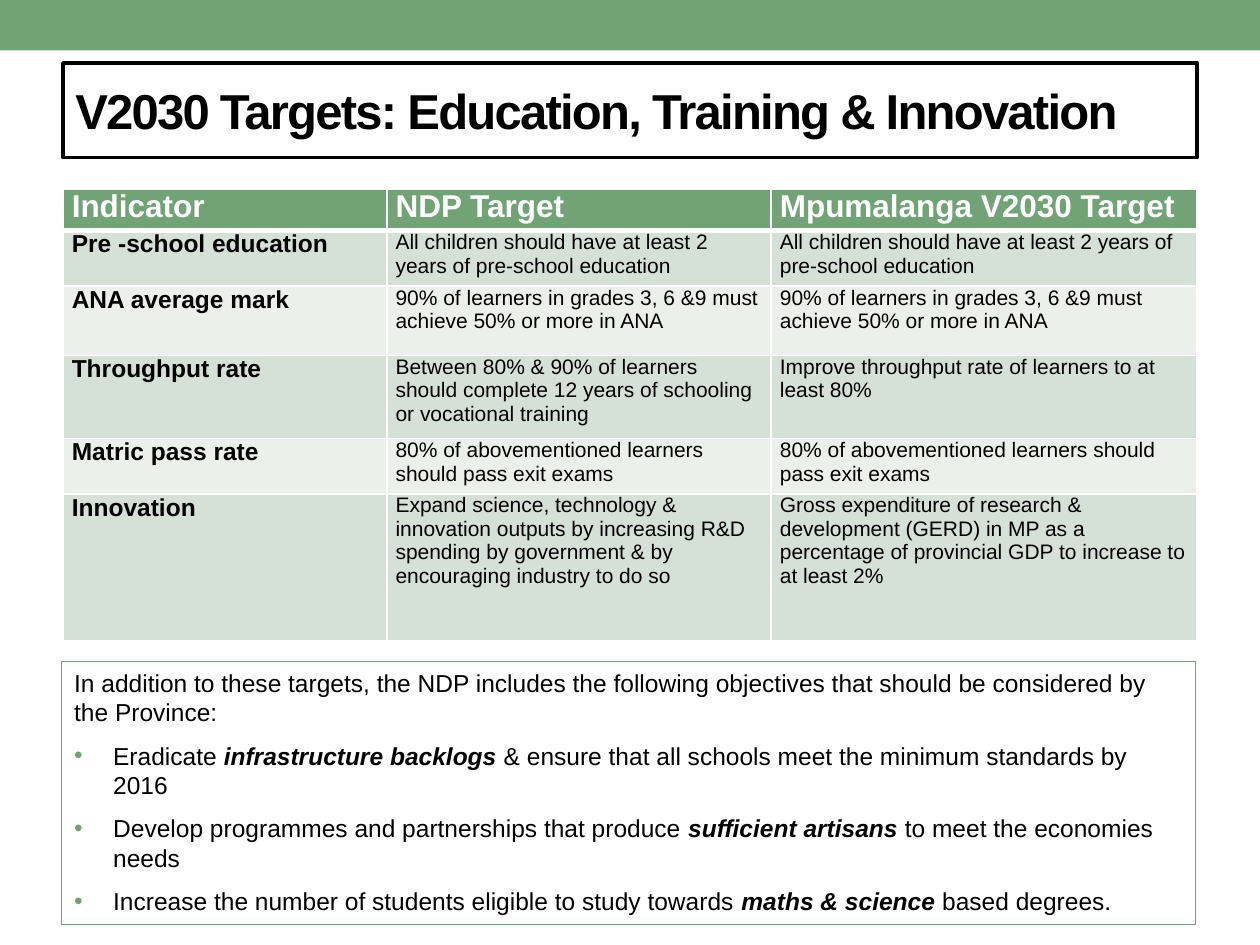
import pptx
import pptx.util
import pptx.dml.color
import pptx.enum.shapes
import pptx.enum.text
import pptx.oxml
import pptx.oxml.ns

COLOURS = {
    "green": "72A376",
    "band_dark": "D5E0D6",
    "band_light": "EBF0EC",
    "white": "FFFFFF",
    "black": "000000",
}
HEADINGS = ("Indicator", "NDP Target", "Mpumalanga V2030 Target")
TARGETS = (
    ("Pre -school education",
     "All children should have at least 2 years of pre-school education",
     "All children should have at least 2 years of pre-school education"),
    ("ANA average mark",
     "90% of learners in grades 3, 6 &9 must achieve 50% or more in ANA",
     "90% of learners in grades 3, 6 &9 must achieve 50% or more in ANA"),
    ("Throughput rate",
     "Between 80% & 90% of learners should complete 12 years of schooling or vocational training",
     "Improve throughput rate of learners to at least 80%"),
    ("Matric pass rate",
     "80% of abovementioned learners should pass exit exams",
     "80% of abovementioned learners should pass exit exams"),
    ("Innovation",
     "Expand science, technology & innovation outputs by increasing R&D spending by government"
     " & by encouraging industry to do so",
     "Gross expenditure of research & development (GERD) in MP as a percentage of provincial GDP"
     " to increase to at least 2%"),
)
COLUMN_WIDTHS = (2.57, 3.05, 3.38)
ROW_HEIGHTS = (0.33, 0.44, 0.55, 0.66, 0.44, 1.17)
INTRO = ("In addition to these targets, the NDP includes the following objectives"
         " that should be considered by the Province:")
# Each objective: lead-in, emphasised phrase, ending
OBJECTIVES = (
    ("Eradicate ", "infrastructure backlogs ",
     "& ensure that all schools meet the minimum standards by 2016"),
    ("Develop programmes and partnerships that produce ", "sufficient artisans ",
     "to meet the economies needs"),
    ("Increase the number of students eligible to study towards ", "maths & science ",
     "based degrees."),
)


def rgb(name):
    return pptx.dml.color.RGBColor.from_string(COLOURS[name])


def add_xml(parent, tag, attributes="", content=""):
    ns = pptx.oxml.ns.nsdecls("a")
    parent.append(pptx.oxml.parse_xml(f"<a:{tag} {ns} {attributes}>{content}</a:{tag}>"))


class TargetsSlide:
    """Slide style; positions are columns and rows of a 20 by 15 half-inch grid."""
    unit = 0.5
    font = "Arial"

    def __init__(self, deck):
        self.slide = deck.slides.add_slide(deck.slide_layouts[6])

    def grid(self, *places):
        return [pptx.util.Inches(place * self.unit) for place in places]

    def box(self, col, row, cols, rows, fill=None, line=None, weight=1):
        shape = self.slide.shapes.add_shape(
            pptx.enum.shapes.MSO_SHAPE.RECTANGLE, *self.grid(col, row, cols, rows))
        shape.shadow.inherit = False
        if fill:
            shape.fill.solid()
            shape.fill.fore_color.rgb = rgb(fill)
        else:
            shape.fill.background()
        if line:
            shape.line.color.rgb = rgb(line)
            shape.line.width = pptx.util.Pt(weight)
        else:
            shape.line.fill.background()
        return shape.text_frame

    def add_text(self, paragraph, text, size, colour="black", **format_values):
        run = paragraph.add_run()
        run.text = text
        values = {"name": self.font, "size": pptx.util.Pt(size), **format_values}
        for attribute, value in values.items():
            setattr(run.font, attribute, value)
        run.font.color.rgb = rgb(colour)
        return run

    def space(self, paragraph):
        values = {"alignment": pptx.enum.text.PP_ALIGN.LEFT,
                  "space_before": pptx.util.Pt(4), "space_after": pptx.util.Pt(4)}
        for attribute, value in values.items():
            setattr(paragraph, attribute, value)

    def title(self, frame, text):
        frame.word_wrap = True
        frame.vertical_anchor = pptx.enum.text.MSO_ANCHOR.MIDDLE
        heading = frame.paragraphs[0]
        heading.alignment = pptx.enum.text.PP_ALIGN.LEFT
        run = self.add_text(heading, text, 28, bold=True)
        run.font._element.set("spc", "-100")

    def cell(self, cell, text, size, fill, colour, bold, bottom):
        margins = {"margin_left": 0.07, "margin_right": 0.07, "margin_top": 0, "margin_bottom": 0}
        for attribute, inches in margins.items():
            setattr(cell, attribute, pptx.util.Inches(inches))
        white = f'<a:solidFill><a:srgbClr val="{COLOURS["white"]}"/></a:solidFill>'
        borders = {"lnL": 1, "lnR": 1, "lnT": 1, "lnB": bottom}
        for side, weight in borders.items():
            add_xml(cell._tc.get_or_add_tcPr(), side, f'w="{pptx.util.Pt(weight)}"', white)
        cell.fill.solid()
        cell.fill.fore_color.rgb = rgb(fill)
        paragraph = cell.text_frame.paragraphs[0]
        self.space(paragraph)
        self.add_text(paragraph, text, size, colour, bold=bold)

    def table(self, col, row, headings, records, widths, heights):
        place = self.grid(col, row, sum(widths) / self.unit, sum(heights) / self.unit)
        table = self.slide.shapes.add_table(len(heights), len(widths), *place).table
        for column, width in zip(table.columns, widths):
            column.width = pptx.util.Inches(width)
        for table_row, height in zip(table.rows, heights):
            table_row.height = pptx.util.Inches(height)
        for c, heading in enumerate(headings):
            self.cell(table.cell(0, c), heading, 18, "green", "white", True, 3)
        for r, record in enumerate(records, 1):
            band = "band_dark" if r % 2 else "band_light"
            for c, text in enumerate(record):
                self.cell(table.cell(r, c), text, 12 if c else 14, band, "black", c == 0, 1)

    def objectives(self, frame, intro, items):
        frame.word_wrap = True
        frame.vertical_anchor = pptx.enum.text.MSO_ANCHOR.TOP
        opening = frame.paragraphs[0]
        self.space(opening)
        self.add_text(opening, intro, 14)
        for parts in items:
            objective = frame.add_paragraph()
            self.space(objective)
            self.bullet(objective)
            for index, part in enumerate(parts):
                stressed = index == 1
                self.add_text(objective, part, 14, bold=stressed, italic=stressed)

    def bullet(self, paragraph):
        properties = paragraph._p.get_or_add_pPr()
        indent = pptx.util.Inches(0.31)
        properties.set("marL", str(indent))
        properties.set("indent", str(-indent))
        add_xml(properties, "buClr", content=f'<a:srgbClr val="{COLOURS["green"]}"/>')
        add_xml(properties, "buFont", f'typeface="{self.font}"')
        add_xml(properties, "buChar", 'char="•"')


def main():
    deck = pptx.Presentation()
    deck.slide_width = pptx.util.Inches(10)
    deck.slide_height = pptx.util.Inches(7.5)
    page = TargetsSlide(deck)

    # Top band and title
    page.box(0, 0, 20, 0.8, fill="green")
    title_frame = page.box(1, 1, 18, 1.5, fill="white", line="black", weight=2.08)
    page.title(title_frame, "V2030 Targets: Education, Training & Innovation")

    # Targets by indicator
    page.table(1, 3, HEADINGS, TARGETS, COLUMN_WIDTHS, ROW_HEIGHTS)

    # Further objectives
    objectives_frame = page.box(0.98, 10.5, 18, 4.18, line="green", weight=0.75)
    page.objectives(objectives_frame, INTRO, OBJECTIVES)

    deck.save("out.pptx")


if __name__ == "__main__":
    main()
